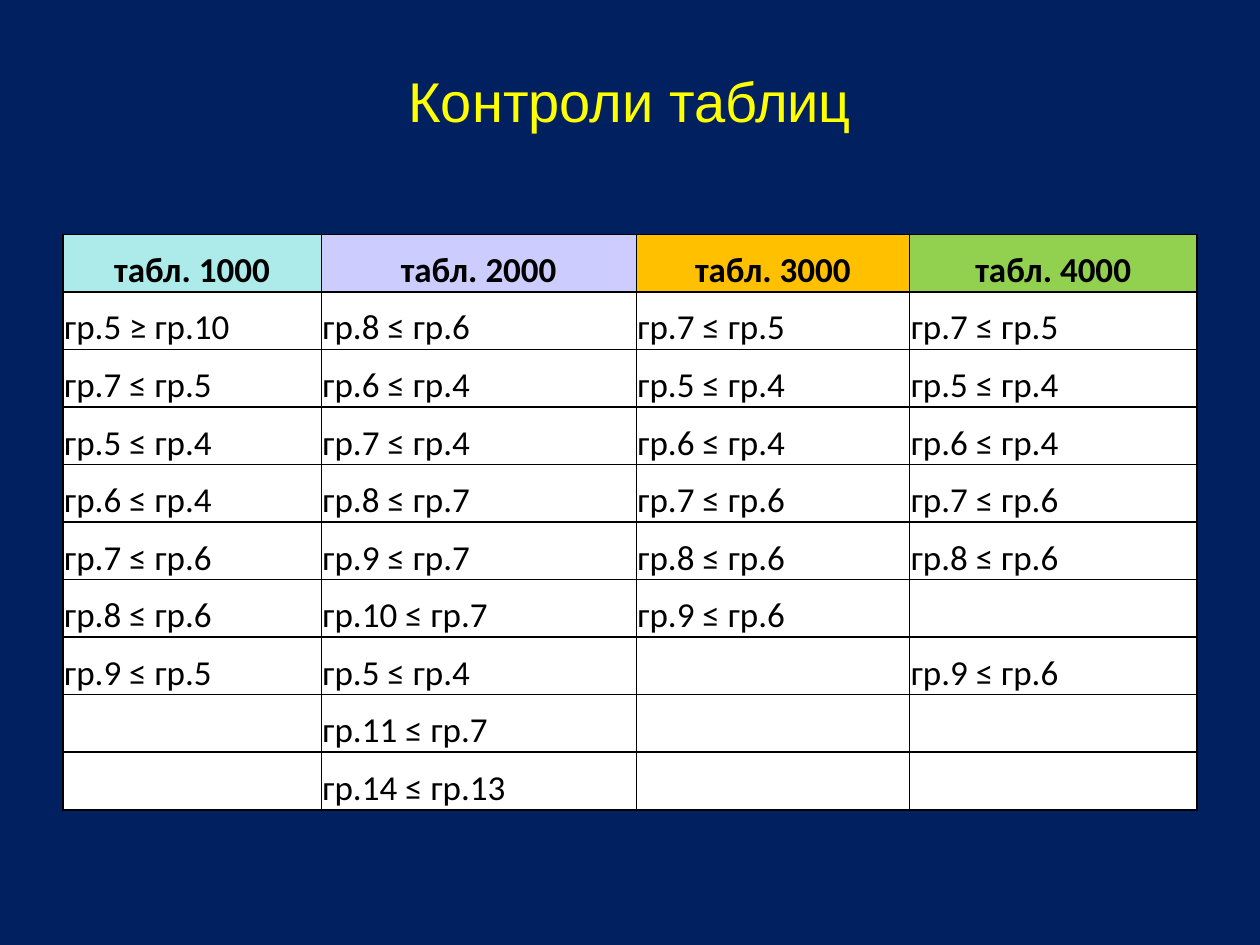
"""Builds the slide with the control rules for tables 1000 to 4000."""
from lxml import etree
from pptx import Presentation
from pptx import util as u
from pptx.dml.color import RGBColor
from pptx.enum import text
from pptx.oxml.ns import qn


def paint(fill, colour):
    fill.solid()
    fill.fore_color.rgb = RGBColor.from_string(colour)


def write(frame, words, size, font, colour, bold=False, align=text.PP_ALIGN.LEFT, spacing=1.0):
    paragraph = frame.paragraphs[0]
    paragraph.alignment = align
    paragraph.line_spacing = spacing
    run = paragraph.add_run()
    run.text = words
    run.font.size = u.Pt(size)
    run.font.name = font
    run.font.bold = bold
    paint(run.font.fill, colour)


deck = Presentation()
deck.slide_width, deck.slide_height = u.Inches(10), u.Inches(7.5)
slide = deck.slides.add_slide(deck.slide_layouts[5])
paint(slide.background.fill, "002060")

heading = slide.shapes.title
heading.left, heading.top = u.Inches(0.5), u.Inches(0.3)
heading.width, heading.height = u.Inches(9), u.Inches(0.93)
heading.text_frame.vertical_anchor = text.MSO_ANCHOR.MIDDLE
heading.text_frame.margin_top = u.Inches(0.11)
write(heading.text_frame, "Контроли таблиц", 32, "Arial", "FFFF00", align=text.PP_ALIGN.CENTER)

headers = ["табл. 1000", "табл. 2000", "табл. 3000", "табл. 4000"]
header_fills = ["ADEBEB", "CCCCFF", "FFC000", "92D050"]
column_widths = [2.05, 2.5, 2.17, 2.28]
rules = [
    ["гр.5 ≥ гр.10", "гр.8 ≤ гр.6", "гр.7 ≤ гр.5", "гр.7 ≤ гр.5"],
    ["гр.7 ≤ гр.5", "гр.6 ≤ гр.4", "гр.5 ≤ гр.4", "гр.5 ≤ гр.4"],
    ["гр.5 ≤ гр.4", "гр.7 ≤ гр.4", "гр.6 ≤ гр.4", "гр.6 ≤ гр.4"],
    ["гр.6 ≤ гр.4", "гр.8 ≤ гр.7", "гр.7 ≤ гр.6", "гр.7 ≤ гр.6"],
    ["гр.7 ≤ гр.6", "гр.9 ≤ гр.7", "гр.8 ≤ гр.6", "гр.8 ≤ гр.6"],
    ["гр.8 ≤ гр.6", "гр.10 ≤ гр.7", "гр.9 ≤ гр.6", ""],
    ["гр.9 ≤ гр.5", "гр.5 ≤ гр.4", "", "гр.9 ≤ гр.6"],
    ["", "гр.11 ≤ гр.7", "", ""],
    ["", "гр.14 ≤ гр.13", "", ""],
]
rows = [headers] + rules

controls = slide.shapes.add_table(
    len(rows), len(headers), u.Inches(0.5), u.Inches(1.86), u.Inches(9), u.Inches(4.57)
).table
controls.horz_banding = False
for column, width in zip(controls.columns, column_widths):
    column.width = u.Inches(width)

for r, row in enumerate(rows):
    is_header = r == 0
    for c, words in enumerate(row):
        cell = controls.cell(r, c)
        cell.vertical_anchor = text.MSO_ANCHOR.BOTTOM
        cell.margin_left = cell.margin_right = cell.margin_top = u.Inches(0.01)
        cell.margin_bottom = 0
        if words:
            align = text.PP_ALIGN.CENTER if is_header else text.PP_ALIGN.LEFT
            write(cell.text_frame, words, 20, "Calibri", "000000", is_header, align, 1.07)
        properties = cell._tc.get_or_add_tcPr()
        for side in ("lnL", "lnR", "lnT", "lnB"):
            border = etree.SubElement(properties, qn(f"a:{side}"), w=str(u.Pt(1)))
            ink = etree.SubElement(border, qn("a:solidFill"))
            etree.SubElement(ink, qn("a:srgbClr"), val="000000")
        paint(cell.fill, header_fills[c] if is_header else "FFFFFF")

deck.save("out.pptx")
